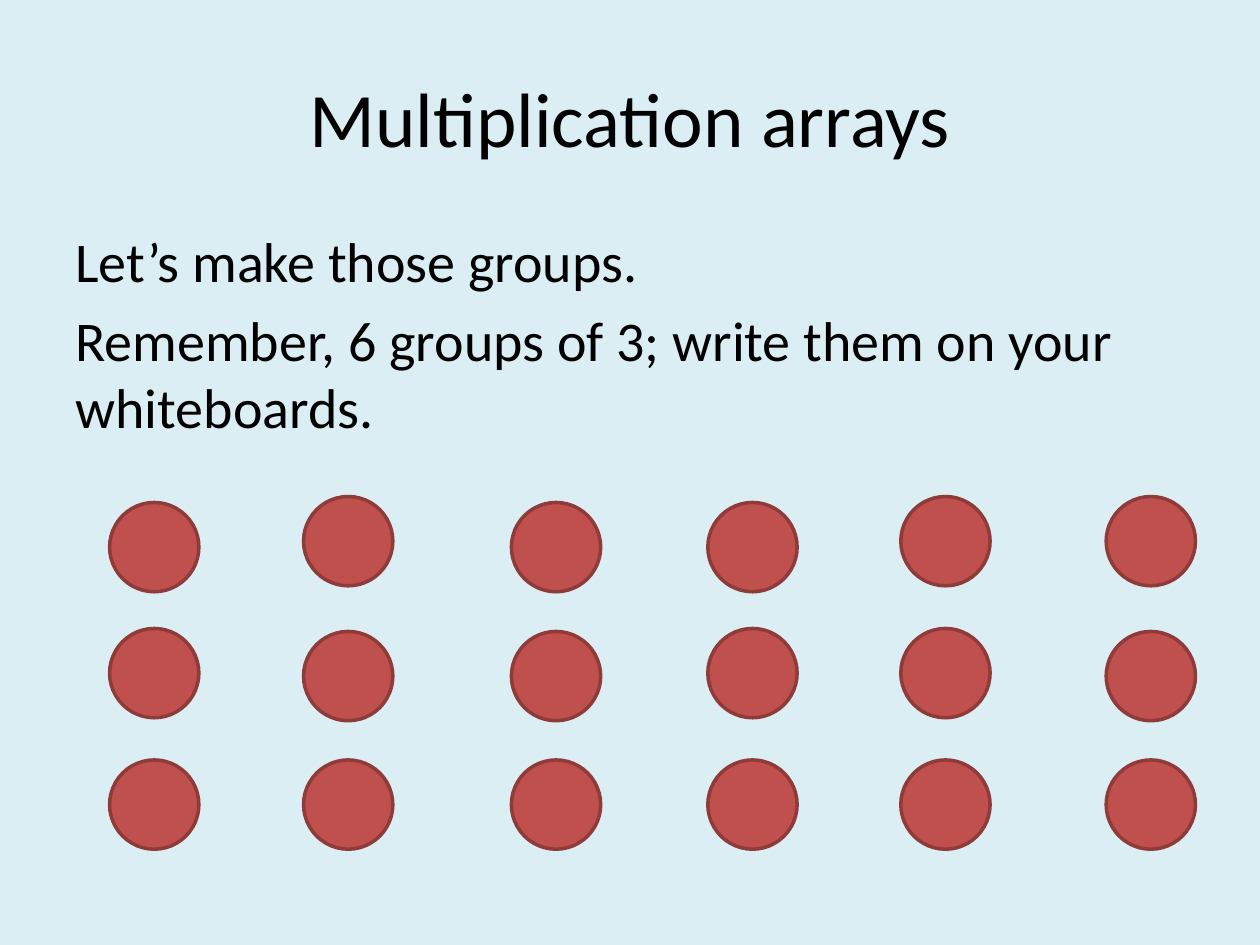
import pptx
import pptx.dml.color
import pptx.enum.shapes
import pptx.enum.text
import pptx.util
from pptx.util import Cm


def colour(hex_string):
    return pptx.dml.color.RGBColor.from_string(hex_string)


class SlideBuilder:
    font = "Calibri"
    text_colour = "000000"
    background = "DBEEF4"
    counter_fill = "C0504D"
    counter_line = "8E3B39"
    counter_size = 1.8

    def __init__(self, slide):
        self.slide = slide
        slide.background.fill.solid()
        slide.background.fill.fore_color.rgb = colour(self.background)

    def text(self, left, top, width, height, content, size, alignment, anchor, space_before=0):
        box = self.slide.shapes.add_textbox(Cm(left), Cm(top), Cm(width), Cm(height))
        frame = box.text_frame
        frame.word_wrap = True
        frame.vertical_anchor = anchor
        frame.text = content
        for paragraph in frame.paragraphs:
            paragraph.alignment = alignment
            paragraph.space_before = pptx.util.Pt(space_before)
            for run in paragraph.runs:
                run.font.name = self.font
                run.font.size = pptx.util.Pt(size)
                run.font.color.rgb = colour(self.text_colour)

    def counter_group(self, left, tops):
        group = self.slide.shapes.add_group_shape()
        for top in tops:
            counter = group.shapes.add_shape(
                pptx.enum.shapes.MSO_SHAPE.OVAL,
                Cm(left), Cm(top), Cm(self.counter_size), Cm(self.counter_size))
            counter.shadow.inherit = False
            counter.fill.solid()
            counter.fill.fore_color.rgb = colour(self.counter_fill)
            counter.line.color.rgb = colour(self.counter_line)
            counter.line.width = pptx.util.Pt(2)


def main():
    presentation = pptx.Presentation()
    presentation.slide_width = Cm(25.4)
    presentation.slide_height = Cm(19.05)
    slide = presentation.slides.add_slide(presentation.slide_layouts[6])
    builder = SlideBuilder(slide)
    align = pptx.enum.text.PP_ALIGN
    anchor = pptx.enum.text.MSO_ANCHOR

    # Title and instructions
    builder.text(1.27, 0.76, 22.86, 3.18, "Multiplication arrays",
                 44, align.CENTER, anchor.MIDDLE)
    builder.text(1.27, 4.45, 22.86, 12.57,
                 "Let’s make those groups.\n"
                 "Remember, 6 groups of 3; write them on your whiteboards.",
                 32, align.LEFT, anchor.TOP, space_before=6.4)

    # Six groups of three counters: left edge, then top and middle rows
    bottom_row = 15.32
    groups = [
        (2.21, 10.13, 12.67),
        (6.12, 10.01, 12.73),
        (10.31, 10.13, 12.73),
        (14.27, 10.13, 12.67),
        (18.16, 10.01, 12.67),
        (22.3, 10.01, 12.73),
    ]
    for left, top_row, middle_row in groups:
        builder.counter_group(left, (top_row, middle_row, bottom_row))

    presentation.save("out.pptx")


if __name__ == "__main__":
    main()
